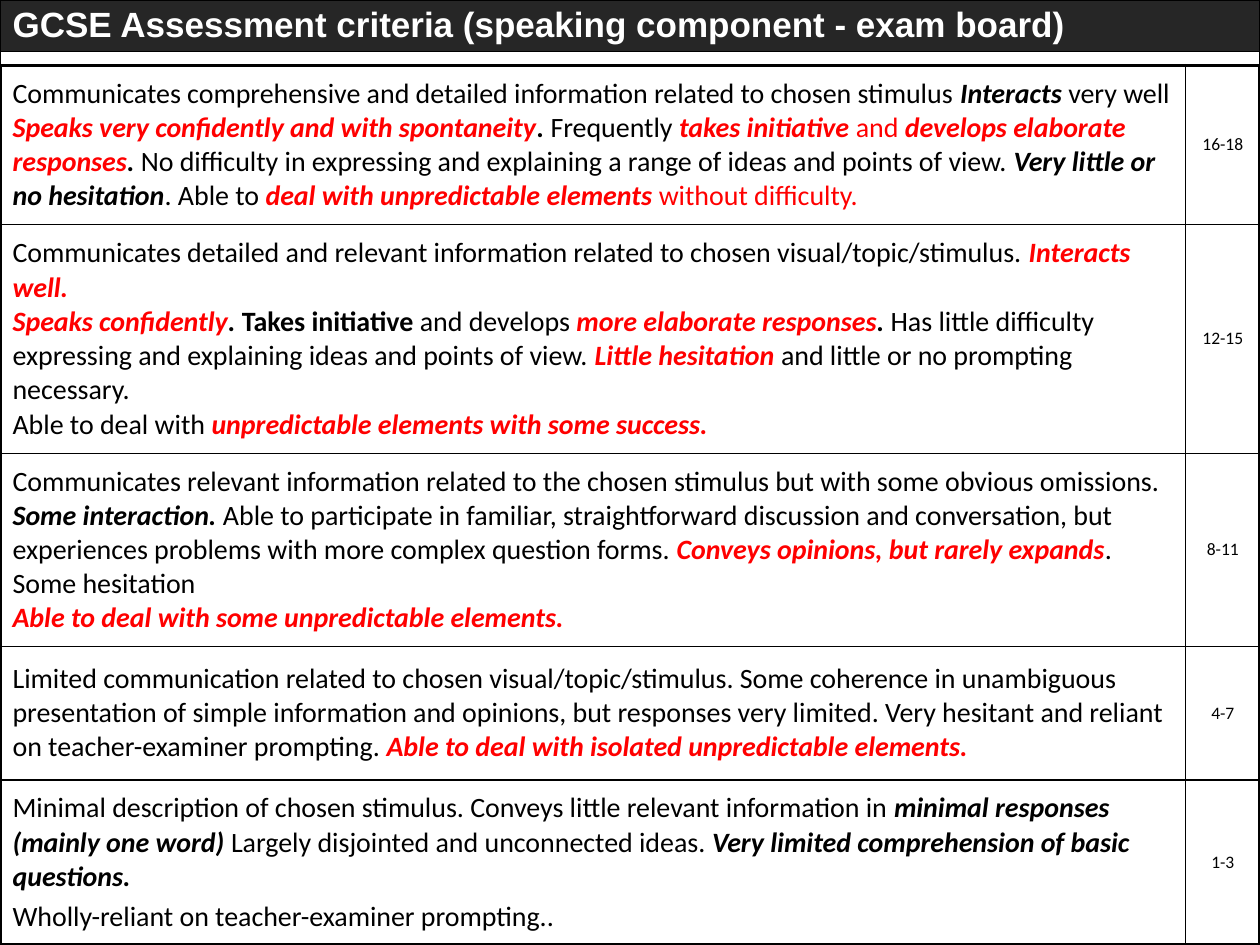
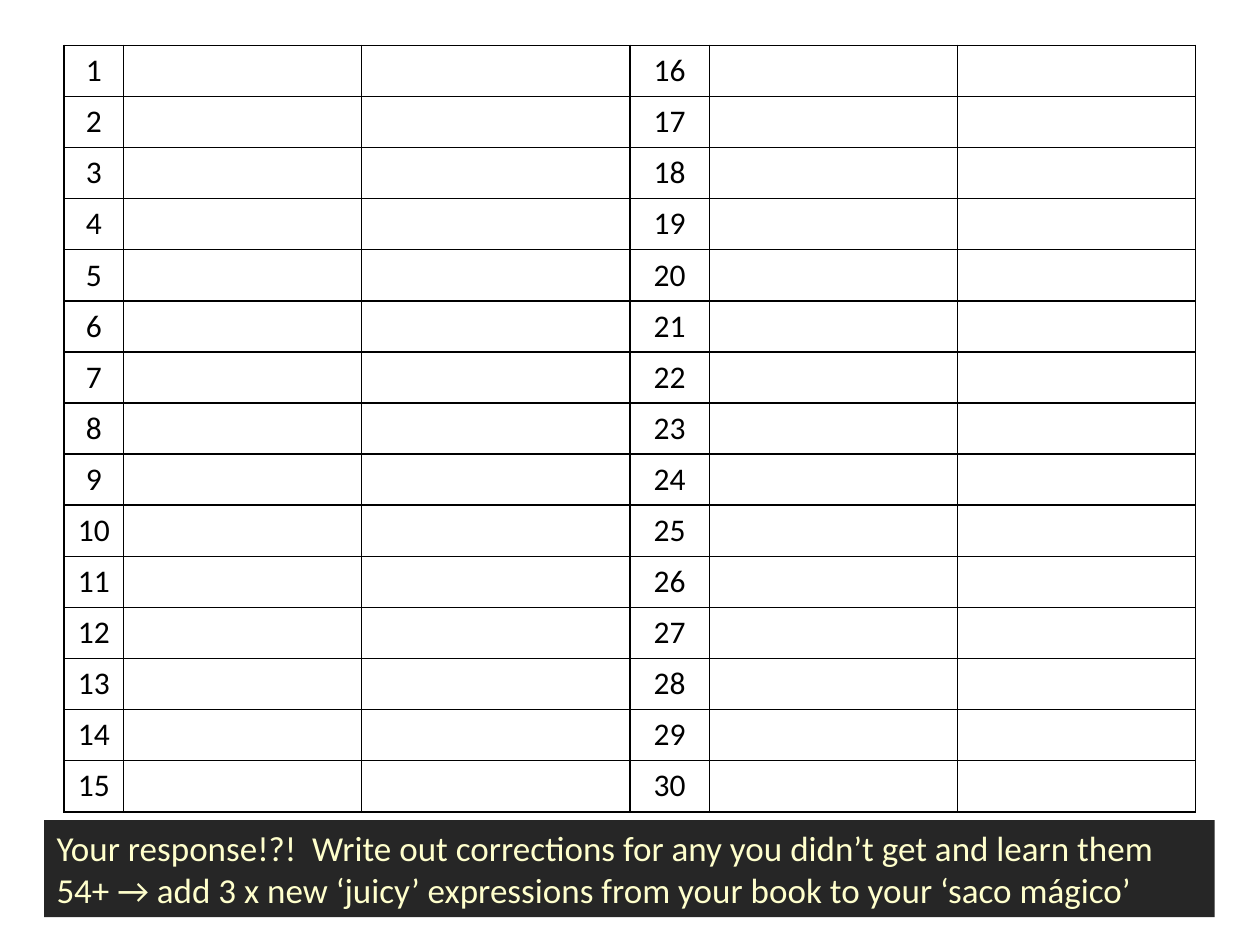
from lxml.etree import SubElement
from pptx import Presentation
from pptx.dml.color import RGBColor
from pptx.enum.shapes import MSO_SHAPE
from pptx.enum.text import MSO_ANCHOR as ANCHOR, PP_ALIGN as ALIGN
from pptx.oxml.ns import qn
from pptx.util import Inches, Pt

BLACK = RGBColor(0x00, 0x00, 0x00)
WHITE = RGBColor(0xFF, 0xFF, 0xFF)
RED = RGBColor(0xFF, 0x00, 0x00)
CREAM = RGBColor(0xFF, 0xFF, 0xCC)
BAND = RGBColor(0x26, 0x26, 0x26)

# Text styles
PLAIN = {"color": BLACK}
BOLD = {"color": BLACK, "bold": True}
STRESS = {"color": BLACK, "bold": True, "italic": True}
KEY = {"color": RED, "bold": True, "italic": True}
RED_PLAIN = {"color": RED}

# Content: slide 1
HEADING = "GCSE Assessment criteria (speaking component - exam board)"
# Each band: mark range, row height, paragraphs of (text, style)
CRITERIA = [
    ("16-18", 1.26, [[
        ("Communicates comprehensive and detailed information related to chosen stimulus ", PLAIN),
        ("Interacts", STRESS),
        (" very well ", PLAIN),
        ("Speaks very confidently and with spontaneity", KEY),
        (".", STRESS),
        (" Frequently ", PLAIN),
        ("takes initiative", KEY),
        (" and ", RED_PLAIN),
        ("develops elaborate responses", KEY),
        (".", STRESS),
        (" No difficulty in expressing and explaining a range of ideas and points of view. ", PLAIN),
        ("Very little or no hesitation", STRESS),
        (". Able to ", PLAIN),
        ("deal with unpredictable elements", KEY),
        (" without difficulty.", RED_PLAIN),
    ]]),
    ("12-15", 1.82, [[
        ("Communicates detailed and relevant information related to chosen "
         "visual/topic/stimulus. ", PLAIN),
        ("Interacts well.\nSpeaks confidently", KEY),
        (". ", STRESS),
        ("Takes initiative ", BOLD),
        ("and develops ", PLAIN),
        ("more elaborate responses", KEY),
        (".", STRESS),
        (" Has little difficulty expressing and explaining ideas and points of view. ", PLAIN),
        ("Little hesitation ", KEY),
        ("and little or no prompting necessary.\nAble to deal with ", PLAIN),
        ("unpredictable elements with some success.", KEY),
    ]]),
    ("8-11", 1.53, [[
        ("Communicates relevant information related to the chosen stimulus but with some "
         "obvious omissions. ", PLAIN),
        ("Some interaction. ", STRESS),
        ("Able to participate in familiar, straightforward discussion and conversation, but "
         "experiences problems with more complex question forms. ", PLAIN),
        ("Conveys opinions, but rarely expands", KEY),
        (". Some hesitation\n", PLAIN),
        ("Able to deal with some unpredictable elements.", KEY),
    ]]),
    ("4-7", 1.06, [[
        ("Limited communication related to chosen visual/topic/stimulus. Some coherence in "
         "unambiguous presentation of simple information and opinions, but responses very "
         "limited. Very hesitant and reliant on teacher-examiner prompting. ", PLAIN),
        ("Able to deal with isolated unpredictable elements.", KEY),
    ]]),
    ("1-3", 1.31, [
        [("Minimal description of chosen stimulus. Conveys little relevant information in ", PLAIN),
         ("minimal responses (mainly one word) ", STRESS),
         ("Largely disjointed and unconnected ideas. ", PLAIN),
         ("Very limited comprehension of basic questions.", STRESS)],
        [("Wholly-reliant on teacher-examiner prompting..", PLAIN)],
    ]),
]

# Content: slide 2
ANSWER_ROWS = 15
ANSWER_COLUMNS = [0.47, 1.89, 2.13, 0.63, 1.97, 1.89]
NUMBER_COLUMNS = (0, 3)
RESPONSE = ("Your response!?!  Write out corrections for any you didn’t get and learn them\n"
            "54+ → add 3 x new ‘juicy’ expressions from your book to your ‘saco mágico’")


def write(frame, paragraphs, size, font="Calibri", align=ALIGN.LEFT):
    """Fill a text frame with paragraphs of (text, style) pieces."""
    for number, pieces in enumerate(paragraphs):
        paragraph = frame.add_paragraph() if number else frame.paragraphs[0]
        paragraph.alignment = align
        if number:
            paragraph.space_before = Pt(size * 0.2)
        for text, style in pieces:
            for line_number, line in enumerate(text.split("\n")):
                if line_number:
                    paragraph.add_line_break()
                if not line:
                    continue
                run = paragraph.add_run()
                run.text = line
                look = {"name": font, "size": Pt(size), "bold": False, "italic": False, **style}
                run.font.color.rgb = look.pop("color")
                for attribute, value in look.items():
                    setattr(run.font, attribute, value)


def set_borders(cell, widths):
    """Draw black borders; widths are points for left, right, top, bottom."""
    properties = cell._tc.get_or_add_tcPr()
    for side, width in zip("LRTB", widths):
        line = SubElement(properties, qn(f"a:ln{side}"), w=str(Pt(width)))
        solid = SubElement(line, qn("a:solidFill"))
        SubElement(solid, qn("a:srgbClr"), val=str(BLACK))


def add_grid(slide, left, top, columns, rows, inner, outer):
    """Add an unfilled table with inner and outer border widths in points."""
    last_row, last_column = len(rows) - 1, len(columns) - 1
    table = slide.shapes.add_table(len(rows), len(columns), Inches(left), Inches(top),
                                   Inches(sum(columns)), Inches(sum(rows))).table
    table.first_row = table.horz_banding = False
    for column, width in zip(table.columns, columns):
        column.width = Inches(width)
    for r, height in enumerate(rows):
        table.rows[r].height = Inches(height)
        for c in range(len(columns)):
            at_edge = (c == 0, c == last_column, r == 0, r == last_row)
            cell = table.cell(r, c)
            set_borders(cell, [outer if edge else inner for edge in at_edge])
            cell.fill.background()
    return table


def build_criteria(slide):
    # Heading band above an open frame
    frame = add_grid(slide, 0, 0, [10], [0.41, 7.09], 0.75, 0.75)
    heading = frame.cell(0, 0)
    heading.fill.solid()
    heading.fill.fore_color.rgb = BAND
    write(heading.text_frame, [[(HEADING, {"color": WHITE, "bold": True})]], 20, "Arial")

    # Criteria with their marks
    heights = [height for _, height, _ in CRITERIA]
    criteria = add_grid(slide, 0, 0.52, [9.41, 0.59], heights, 1, 2.25)
    for r, (marks, _, description) in enumerate(CRITERIA):
        description_cell, marks_cell = criteria.cell(r, 0), criteria.cell(r, 1)
        description_cell.vertical_anchor = marks_cell.vertical_anchor = ANCHOR.MIDDLE
        write(description_cell.text_frame, description, 16)
        write(marks_cell.text_frame, [[(marks, PLAIN)]], 10, align=ALIGN.CENTER)


def build_answers(slide):
    # Numbered answer grid
    answers = add_grid(slide, 0.51, 0.36, ANSWER_COLUMNS, [6.08 / ANSWER_ROWS] * ANSWER_ROWS, 1, 1)
    for half, column in enumerate(NUMBER_COLUMNS):
        for r in range(ANSWER_ROWS):
            answer_number = str(half * ANSWER_ROWS + r + 1)
            write(answers.cell(r, column).text_frame, [[(answer_number, PLAIN)]], 18,
                  align=ALIGN.CENTER)

    # Response band
    response = slide.shapes.add_shape(MSO_SHAPE.RECTANGLE, Inches(0.35), Inches(6.51),
                                      Inches(9.29), Inches(0.77))
    response.shadow.inherit = False
    response.fill.solid()
    response.fill.fore_color.rgb = BAND
    response.line.fill.background()
    response.text_frame.word_wrap = True
    response.text_frame.vertical_anchor = ANCHOR.TOP
    write(response.text_frame, [[(RESPONSE, {"color": CREAM})]], 20)


def main():
    deck = Presentation()
    deck.slide_width, deck.slide_height = Inches(10), Inches(7.5)
    blank = deck.slide_layouts[6]
    for build in (build_criteria, build_answers):
        build(deck.slides.add_slide(blank))
    deck.save("out.pptx")


if __name__ == "__main__":
    main()
